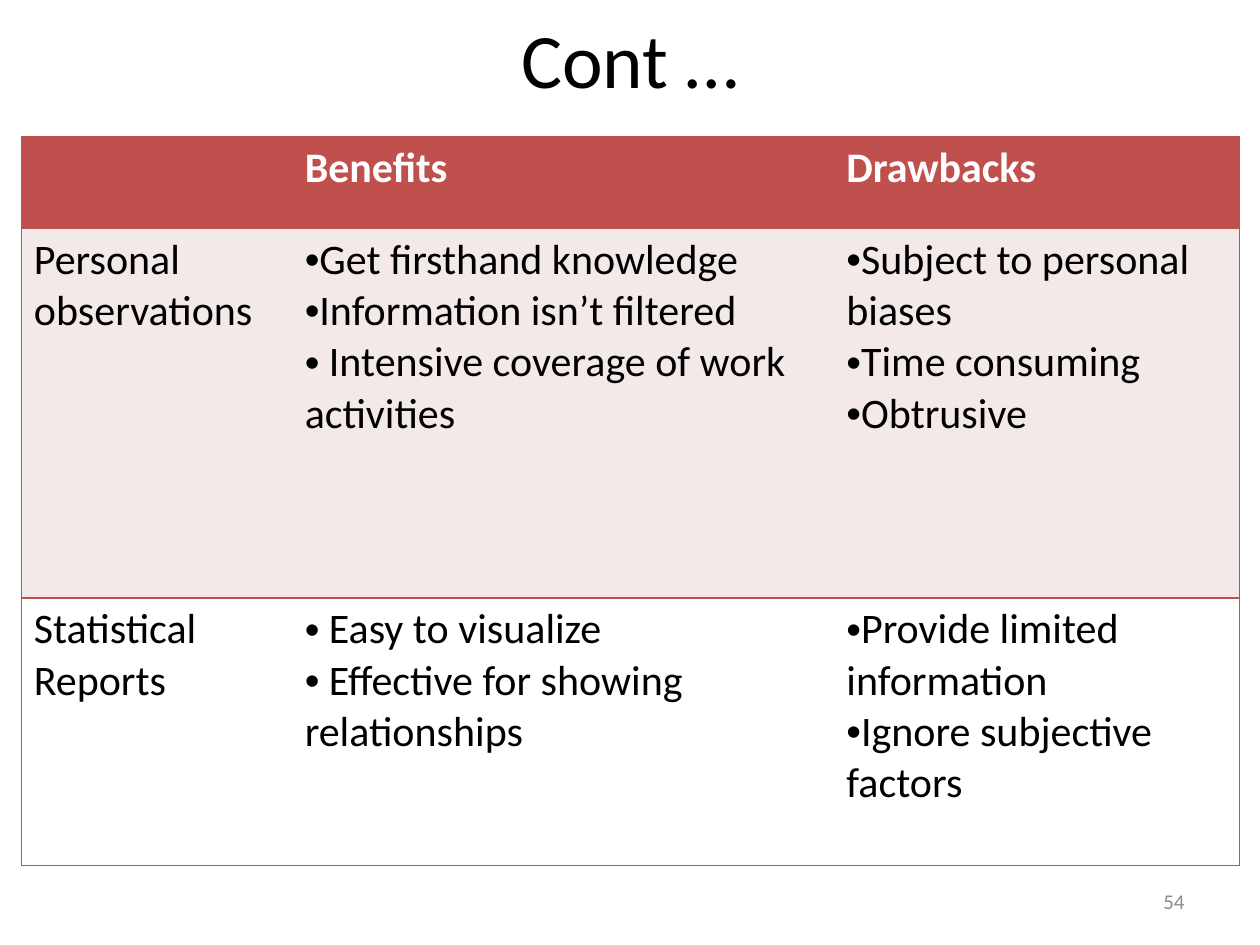
from dataclasses import dataclass

from lxml.etree import SubElement
from pptx import Presentation
from pptx.dml.color import RGBColor
from pptx.enum.text import MSO_ANCHOR, PP_ALIGN
from pptx.oxml.ns import qn
from pptx.util import Cm, Pt


@dataclass(frozen=True)
class Theme:
    font: str = "Calibri"
    black: str = "000000"
    white: str = "FFFFFF"
    red: str = "C0504D"
    pink: str = "F4E9E9"
    grey: str = "8C8C8C"
    title: int = 44
    body: int = 24
    small: int = 12
    line: int = 1


theme = Theme()


def style(para, size, color, bold=False):
    for run in para.runs:
        run.font.name = theme.font
        run.font.size = Pt(size)
        run.font.bold = bold
        run.font.color.rgb = RGBColor.from_string(color)


def edge(cell, side, shown):
    """Draw one cell border (L, R, T or B), or blank it out."""
    props = cell._tc.get_or_add_tcPr()
    line = SubElement(props, qn(f"a:ln{side}"), w=str(Pt(theme.line)))
    if shown:
        fill = SubElement(line, qn("a:solidFill"))
        SubElement(fill, qn("a:srgbClr"), val=theme.red)
    else:
        SubElement(line, qn("a:noFill"))


deck = Presentation()
deck.slide_width, deck.slide_height = Cm(25.4), Cm(19.05)
slide = deck.slides.add_slide(deck.slide_layouts[5])

title = slide.shapes.title
title.left, title.top = Cm(1.27), Cm(0)
title.width, title.height = Cm(22.86), Cm(2.34)
title.text_frame.text = "Cont …"
title.text_frame.vertical_anchor = MSO_ANCHOR.MIDDLE
head = title.text_frame.paragraphs[0]
head.alignment = PP_ALIGN.CENTER
style(head, theme.title, theme.black)

# Each cell is a list of paragraphs; body cells after the first are bulleted.
rows = [
    [[], ["Benefits"], ["Drawbacks"]],
    [
        ["Personal observations"],
        ["Get firsthand knowledge", "Information isn’t filtered",
         " Intensive coverage of work\vactivities"],
        ["Subject to personal biases", "Time consuming", "Obtrusive"],
    ],
    [
        ["Statistical Reports"],
        [" Easy to visualize", " Effective for showing relationships"],
        ["Provide limited information", "Ignore subjective factors"],
    ],
]
fills = [theme.red, theme.pink, theme.white]
widths = [5.46, 10.92, 8.18]
heights = [1.85, 7.45, 5.4]

frame = slide.shapes.add_table(len(rows), len(widths), Cm(0.43), Cm(2.75),
                               Cm(sum(widths)), Cm(sum(heights)))
table = frame.table
table.horz_banding = False
for col, width in zip(table.columns, widths):
    col.width = Cm(width)
for row, height in zip(table.rows, heights):
    row.height = Cm(height)

for r, row in enumerate(rows):
    for c, lines in enumerate(row):
        cell = table.cell(r, c)
        edge(cell, "L", c == 0)
        edge(cell, "R", c == len(widths) - 1)
        edge(cell, "T", True)
        edge(cell, "B", True)
        cell.fill.solid()
        cell.fill.fore_color.rgb = RGBColor.from_string(fills[r])
        cell.text_frame.text = "\n".join(lines)
        for para in cell.text_frame.paragraphs:
            style(para, theme.body, theme.black if r else theme.white, r == 0)
            if r and c:
                props = para._p.get_or_add_pPr()
                props.set("marL", "0")
                props.set("indent", "0")
                SubElement(props, qn("a:buFont"), typeface="Arial")
                SubElement(props, qn("a:buChar"), char="•")

page = slide.shapes.add_textbox(Cm(18.2), Cm(17.66), Cm(5.93), Cm(1.01))
page.text_frame.word_wrap = True
page.text_frame.vertical_anchor = MSO_ANCHOR.MIDDLE
page.text_frame.text = "54"
num = page.text_frame.paragraphs[0]
num.alignment = PP_ALIGN.RIGHT
style(num, theme.small, theme.grey)

deck.save("out.pptx")
